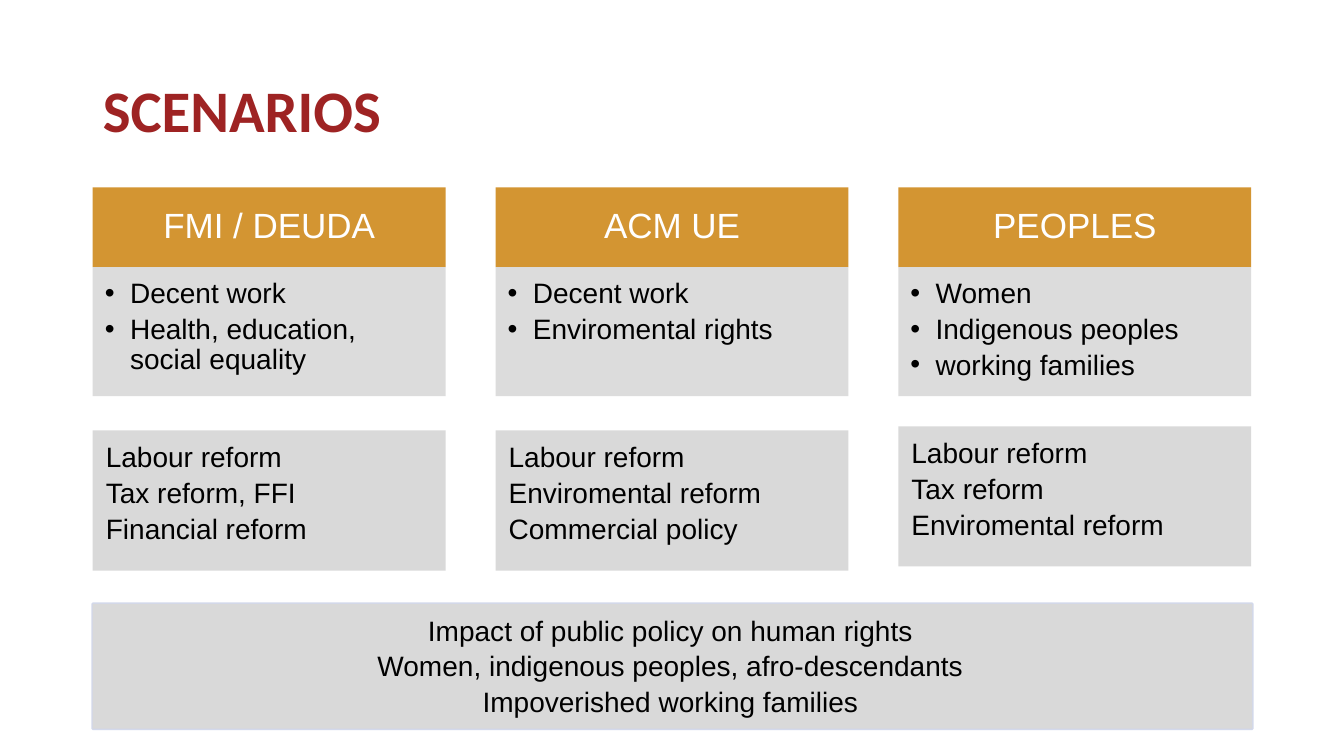
from lxml import etree
from pptx import Presentation
from pptx.dml.color import RGBColor
from pptx.enum.shapes import MSO_SHAPE
from pptx.enum.text import MSO_ANCHOR, MSO_AUTO_SIZE, PP_ALIGN
from pptx.oxml.ns import qn
from pptx.util import Inches, Pt

RECT = MSO_SHAPE.RECTANGLE
TOP, MIDDLE = MSO_ANCHOR.TOP, MSO_ANCHOR.MIDDLE
LEFT, CENTER = PP_ALIGN.LEFT, PP_ALIGN.CENTER
FIXED = MSO_AUTO_SIZE.NONE
COLORS = {"title": "9E2323", "head": "D39532", "panel": "D9D9D9",
          "edge": "CFD5EA", "dark": "000000", "light": "FFFFFF"}
SIDES = ("margin_left", "margin_top", "margin_right", "margin_bottom")
BODY = {"size": 20, "name": "Arial", "color": "dark", "bold": False,
        "align": LEFT, "anchor": TOP, "after": 4,
        "inset": (0.13, 0.13, 0.17, 0.19)}
LIST = {**BODY, "inset": (0.12, 0.12, 0.16, 0.17), "bullet": True}
FOOT = {**BODY, "align": CENTER}
HEAD = {**BODY, "size": 25, "color": "light", "align": CENTER,
        "anchor": MIDDLE, "after": 0, "inset": (0.19, 0.11, 0.19, 0.11)}
TITLE = {**BODY, "size": 42, "name": "Calibri", "color": "title",
         "bold": True, "anchor": MIDDLE, "after": 0,
         "inset": (0.1, 0.05, 0.1, 0.05)}

EDGE, WIDTH = 0.92, 11.5
COL, STEP = 3.5, 3.995
COLUMNS = [
    ("FMI / DEUDA",
     ["Decent work", "Health, education, social equality"],
     ["Labour reform", "Tax reform, FFI", "Financial reform"], 4.27),
    ("ACM UE",
     ["Decent work", "Enviromental rights"],
     ["Labour reform", "Enviromental reform", "Commercial policy"], 4.27),
    ("PEOPLES",
     ["Women", "Indigenous peoples", "working families"],
     ["Labour reform", "Tax reform", "Enviromental reform"], 4.23),
]
IMPACT = ["Impact of public policy on human rights",
          "Women, indigenous peoples, afro-descendants",
          "Impoverished working families"]


def tint(key):
    return RGBColor.from_string(COLORS[key])


def fade(color, share):
    for node in color.iter(qn("a:srgbClr")):
        etree.SubElement(node, qn("a:alpha"), val=str(share * 1000))


def mark(para):
    props = para._p.get_or_add_pPr()
    props.set("marL", str(Inches(0.25)))
    props.set("indent", str(Inches(-0.25)))
    etree.SubElement(props, qn("a:buFont"), typeface="Arial")
    etree.SubElement(props, qn("a:buChar"), char="•")


def write(shape, lines, style):
    frame = shape.text_frame
    frame.text = "\n".join(lines)
    frame.word_wrap = True
    frame.auto_size = FIXED
    frame.vertical_anchor = style["anchor"]
    for side, gap in zip(SIDES, style["inset"]):
        setattr(frame, side, Inches(gap))
    values = {"size": Pt(style["size"]), "name": style["name"],
              "bold": style["bold"]}
    for para in frame.paragraphs:
        para.alignment = style["align"]
        para.line_spacing = 0.9
        para.space_before = Pt(0)
        para.space_after = Pt(style["after"])
        if style.get("bullet"):
            mark(para)
        for run in para.runs:
            for key, value in values.items():
                setattr(run.font, key, value)
            run.font.color.rgb = tint(style["color"])


def block(slide, box, fill):
    shape = slide.shapes.add_shape(RECT, *map(Inches, box))
    shape.shadow.inherit = False
    shape.fill.solid()
    shape.fill.fore_color.rgb = tint(fill)
    shape.line.fill.background()
    return shape


def heading(slide, box):
    title = slide.shapes.title
    for key, value in zip(("left", "top", "width", "height"), box):
        setattr(title, key, Inches(value))
    write(title, ["SCENARIOS"], TITLE)


def card(slide, box, name, points):
    x, y, w, h = box
    bar = 0.79
    write(block(slide, (x, y, w, bar), "head"), [name], HEAD)
    panel = block(slide, (x, y + bar, w, h - bar), "panel")
    fade(panel.element.spPr, 90)
    write(panel, points, LIST)


def reform(slide, box, lines):
    write(block(slide, box, "panel"), lines, BODY)


def impact(slide, box):
    back = block(slide, box, "panel")
    back.line.color.rgb = tint("edge")
    back.line.width = Pt(2)
    fade(back.element.spPr.find(qn("a:ln")), 90)
    write(block(slide, box, "panel"), IMPACT, FOOT)


def main():
    deck = Presentation()
    deck.slide_width, deck.slide_height = Inches(13.33), Inches(7.5)
    slide = deck.slides.add_slide(deck.slide_layouts.get_by_name("Title Only"))
    heading(slide, (EDGE, 0.4, WIDTH, 1.45))
    for i, (name, points, lines, top) in enumerate(COLUMNS):
        x = EDGE + i * STEP
        card(slide, (x, 1.86, COL, 2.07), name, points)
        reform(slide, (x, top, COL, 1.39), lines)
    impact(slide, (EDGE, 5.99, WIDTH, 1.24))
    deck.save("out.pptx")


if __name__ == "__main__":
    main()
